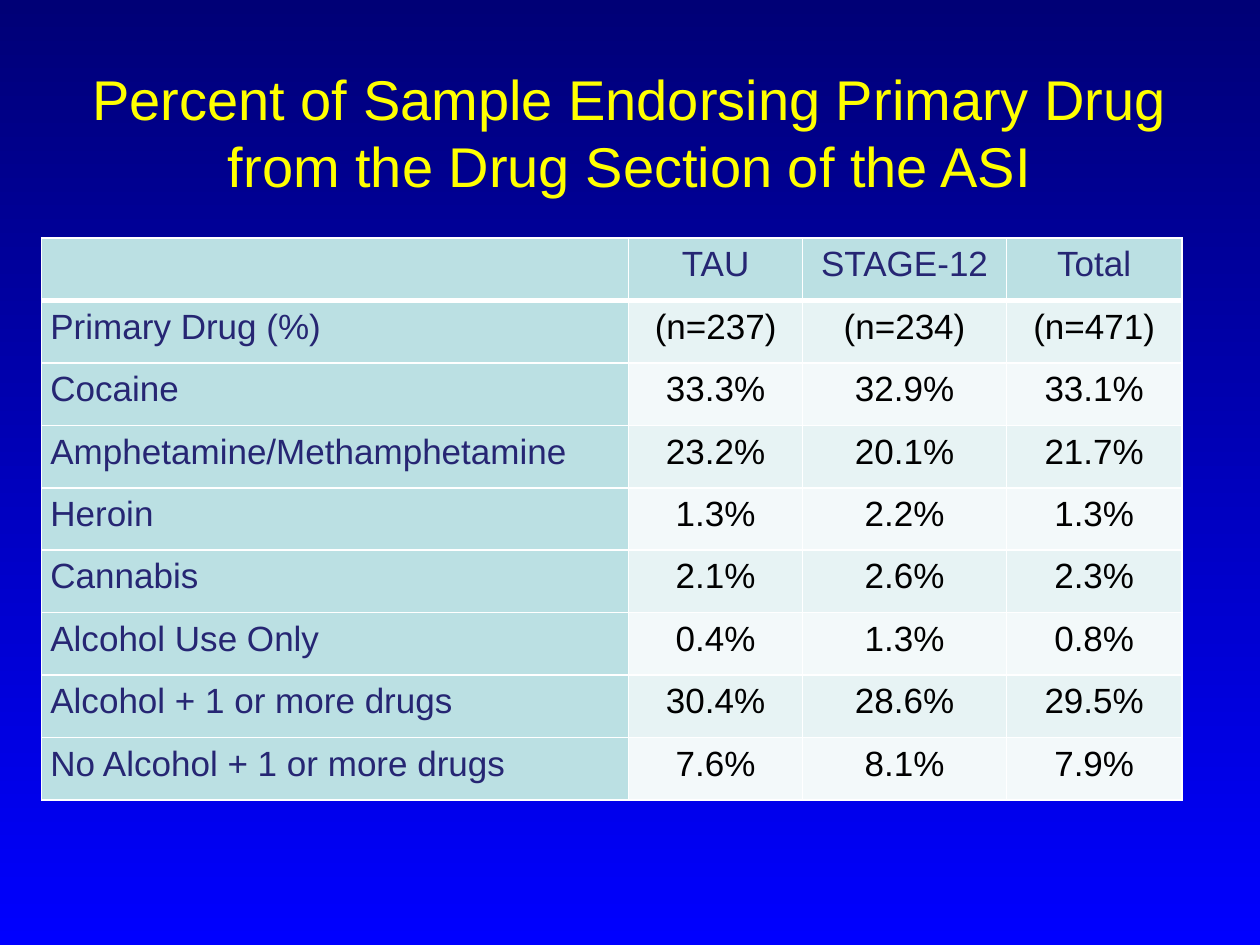
from lxml import etree
from pptx import Presentation
from pptx.dml.color import RGBColor
from pptx.enum import text
from pptx.oxml import ns
from pptx.util import Inches, Pt

TITLE = "Percent of Sample Endorsing Primary Drug from the Drug Section of the ASI"
ROWS = [
    ("", "TAU", "STAGE-12", "Total"),
    ("Primary Drug (%)", "(n=237)", "(n=234)", "(n=471)"),
    ("Cocaine", "33.3%", "32.9%", "33.1%"),
    ("Amphetamine/Methamphetamine", "23.2%", "20.1%", "21.7%"),
    ("Heroin", "1.3%", "2.2%", "1.3%"),
    ("Cannabis", "2.1%", "2.6%", "2.3%"),
    ("Alcohol Use Only", "0.4%", "1.3%", "0.8%"),
    ("Alcohol + 1 or more drugs", "30.4%", "28.6%", "29.5%"),
    ("No Alcohol + 1 or more drugs", "7.6%", "8.1%", "7.9%"),
]
WIDTHS = [4.66, 1.38, 1.62, 1.39]
HEIGHT = 4.46

NAVY, BLUE = RGBColor(0, 0, 0x76), RGBColor(0, 0, 0xFF)
YELLOW, BLACK = RGBColor(0xFF, 0xFF, 0), RGBColor(0, 0, 0)
INDIGO, TEAL = RGBColor(0x26, 0x26, 0x73), RGBColor(0xBB, 0xE0, 0xE3)
BANDS = [RGBColor(0xF3, 0xF9, 0xFA), RGBColor(0xE7, 0xF3, 0xF4)]
WHITE = RGBColor(0xFF, 0xFF, 0xFF)
INSETS = {"margin_left": Inches(0.07), "margin_top": Inches(0.01),
          "margin_right": Inches(0.07), "margin_bottom": 0}


def style(item, **values):
    for name, value in values.items():
        setattr(item, name, value)


def write(para, words, size, color):
    run = para.add_run()
    run.text = words
    style(run.font, name="Arial", size=Pt(size))
    run.font.color.rgb = color


def border(cell, base):
    """Draw white lines round a cell; base is the bottom width in points."""
    props = cell._tc.get_or_add_tcPr()
    for side, width in zip("LRTB", (1, 1, 1, base)):
        line = etree.SubElement(props, ns.qn(f"a:ln{side}"), w=str(Pt(width)))
        fill = etree.SubElement(line, ns.qn("a:solidFill"))
        etree.SubElement(fill, ns.qn("a:srgbClr"), val=str(WHITE))


def fill_cell(cell, words, row, col):
    label = row == 0 or col == 0
    style(cell, **INSETS)
    border(cell, 3 if row == 0 else 1)
    cell.fill.solid()
    cell.fill.fore_color.rgb = TEAL if label else BANDS[row % 2]
    if words:
        para = cell.text_frame.paragraphs[0]
        align = text.PP_ALIGN.CENTER if col else text.PP_ALIGN.LEFT
        style(para, alignment=align, line_spacing=1.15)
        write(para, words, 20, INDIGO if label else BLACK)


def main():
    deck = Presentation()
    style(deck, slide_width=Inches(10), slide_height=Inches(7.5))
    slide = deck.slides.add_slide(deck.slide_layouts[5])

    back = slide.background.fill
    back.gradient()
    back.gradient_angle = 270
    for stop, color, pos in zip(back.gradient_stops, (NAVY, BLUE), (0, 1)):
        stop.color.rgb = color
        stop.position = pos

    title = slide.shapes.title
    style(title, left=Inches(0.5), top=Inches(0.42),
          width=Inches(9), height=Inches(1.25))
    style(title.text_frame, word_wrap=True, auto_size=text.MSO_AUTO_SIZE.NONE,
          vertical_anchor=text.MSO_ANCHOR.MIDDLE)
    para = title.text_frame.paragraphs[0]
    para.alignment = text.PP_ALIGN.CENTER
    write(para, TITLE, 32, YELLOW)

    table = slide.shapes.add_table(
        len(ROWS), len(WIDTHS), Inches(0.33), Inches(1.89),
        Inches(sum(WIDTHS)), Inches(HEIGHT)).table
    for column, width in zip(table.columns, WIDTHS):
        column.width = Inches(width)
    for r, row in enumerate(ROWS):
        for c, words in enumerate(row):
            fill_cell(table.cell(r, c), words, r, c)

    deck.save("out.pptx")


if __name__ == "__main__":
    main()
